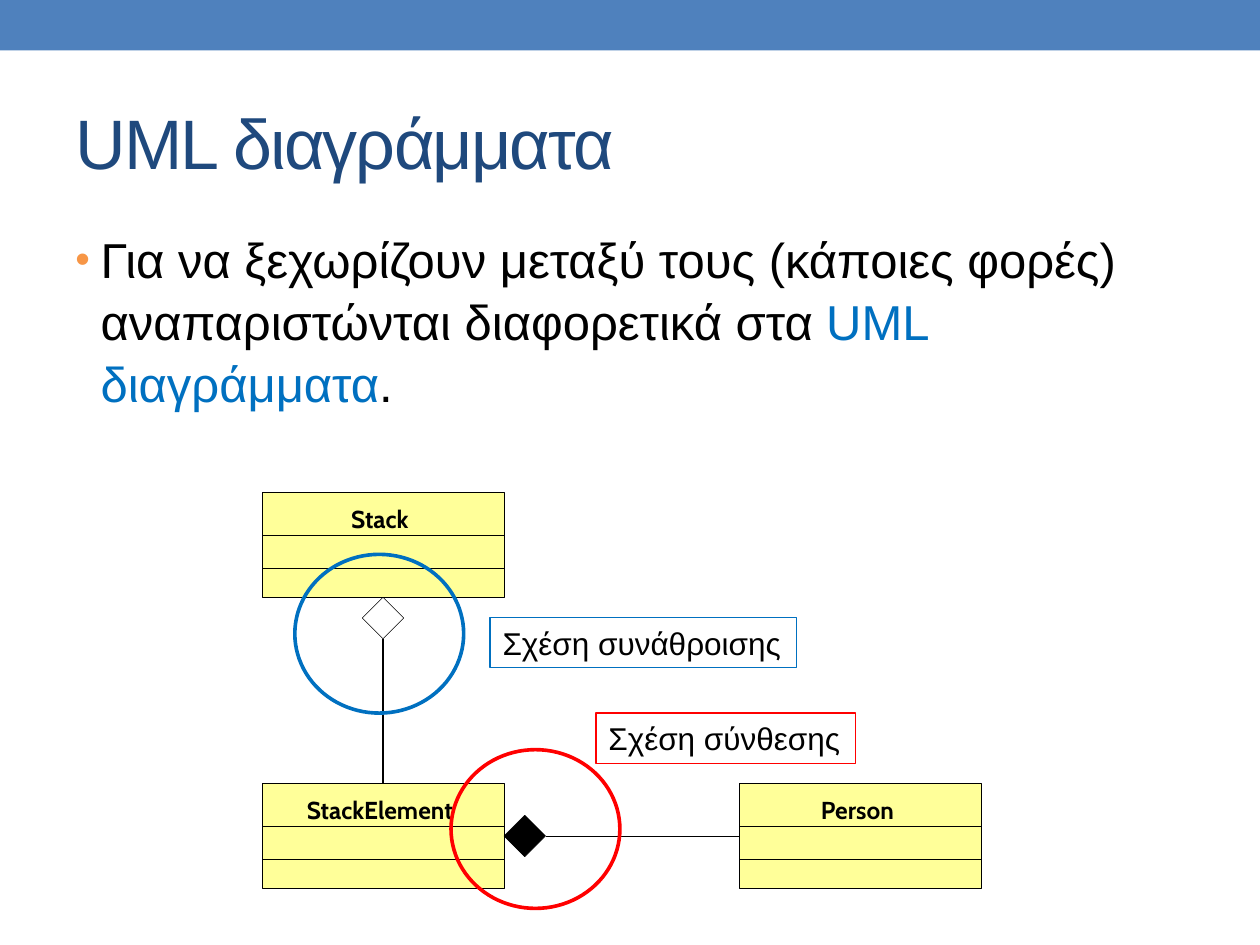
from lxml.etree import SubElement
from pptx import Presentation
from pptx.dml.color import RGBColor
from pptx.enum.shapes import MSO_CONNECTOR as Connector, MSO_SHAPE as Shape
from pptx.enum.text import MSO_ANCHOR as Anchor, MSO_AUTO_SIZE as AutoSize, PP_ALIGN as Align
from pptx.oxml.ns import qn
from pptx.util import Inches, Pt

SLIDE_W, SLIDE_H = 10, 7.5
MARGIN = 0.05 * SLIDE_W
CLASS_W, CLASS_H = 1.92, 0.83
LEFT_COL, RIGHT_COL = 2.08, 5.87
TOP_ROW, BOTTOM_ROW = 3.91, 6.22
DIAMOND = 0.33
RING_W, RING_H = 1.34, 1.26
BLACK, BLUE, RED, YELLOW = "000000", "0070C0", "FF0000", "FFFF99"


def color(hex_string):
    return RGBColor.from_string(hex_string)


def add_run(paragraph, text, size, hex_string, font="Arial", bold=False):
    run = paragraph.add_run()
    run.text = text
    run.font.size = Pt(size)
    run.font.name = font
    run.font.bold = bold
    run.font.color.rgb = color(hex_string)
    return run


def add_figure(shapes, kind, box, fill=None, line=None, width=0.25):
    figure = shapes.add_shape(kind, *map(Inches, box))
    figure.shadow.inherit = False
    if fill:
        figure.fill.solid()
        figure.fill.fore_color.rgb = color(fill)
    else:
        figure.fill.background()
    if line:
        figure.line.color.rgb = color(line)
        figure.line.width = Pt(width)
    else:
        figure.line.fill.background()
    return figure


def add_line(shapes, start, end, width=0.25):
    line = shapes.add_connector(Connector.STRAIGHT, *map(Inches, (*start, *end)))
    line.line.color.rgb = color(BLACK)
    line.line.width = Pt(width)
    SubElement(line._element.spPr, qn("a:effectLst"))


def add_class(slide, name, left, top):
    shapes = slide.shapes.add_group_shape().shapes
    add_figure(shapes, Shape.RECTANGLE, (left, top, CLASS_W, CLASS_H), YELLOW, BLACK)
    heading = shapes.add_textbox(*map(Inches, (left + 0.07, top + 0.04, 1.73, 0.34)))
    frame = heading.text_frame
    frame.word_wrap = True
    frame.auto_size = AutoSize.SHAPE_TO_FIT_TEXT
    frame.paragraphs[0].alignment = Align.CENTER
    add_run(frame.paragraphs[0], name, 14, BLACK, "Cabin", True)
    for offset in (0.34, 0.6):
        add_line(shapes, (left, top + offset), (left + CLASS_W, top + offset))


def add_label(slide, text, box, line):
    label = add_figure(slide.shapes, Shape.RECTANGLE, box, line=line, width=0.75)
    frame = label.text_frame
    frame.word_wrap = False
    frame.auto_size = AutoSize.SHAPE_TO_FIT_TEXT
    frame.vertical_anchor = Anchor.TOP
    frame.paragraphs[0].alignment = Align.LEFT
    add_run(frame.paragraphs[0], text, 18, BLACK)


def add_ring(slide, left, top, line):
    add_figure(slide.shapes, Shape.OVAL, (left, top, RING_W, RING_H), line=line, width=2.08)


def set_title(slide, text):
    title = slide.shapes.title
    title.left, title.top, title.width, title.height = map(
        Inches, (MARGIN, 0.58, SLIDE_W - 2 * MARGIN, 1.08))
    frame = title.text_frame
    frame.vertical_anchor = Anchor.MIDDLE
    frame.paragraphs[0].alignment = Align.LEFT
    run = add_run(frame.paragraphs[0], text, 40, "1F497D")
    run.font._element.set("spc", "-100")


def add_bullet(slide, parts):
    body = slide.shapes.add_textbox(
        *map(Inches, (MARGIN, 1.75, SLIDE_W - 2 * MARGIN, 2.01)))
    body.text_frame.word_wrap = True
    paragraph = body.text_frame.paragraphs[0]
    paragraph.line_spacing = 1.05
    props = paragraph._p.get_or_add_pPr()
    props.set("marL", str(Inches(0.2)))
    props.set("indent", str(-Inches(0.2)))
    SubElement(SubElement(props, qn("a:buClr")), qn("a:srgbClr"), val="F79646")
    SubElement(props, qn("a:buSzPct"), val="85000")
    SubElement(props, qn("a:buFont"), typeface="Arial")
    SubElement(props, qn("a:buChar"), char="•")
    for text, hex_string in parts:
        add_run(paragraph, text, 28, hex_string)


def add_composition(slide):
    left, middle = LEFT_COL + CLASS_W, BOTTOM_ROW + CLASS_H / 2
    add_line(slide.shapes, (left + DIAMOND, middle), (RIGHT_COL, middle))
    add_figure(slide.shapes, Shape.DIAMOND,
               (left, middle - DIAMOND / 2, DIAMOND, DIAMOND), BLACK, BLACK)


def add_aggregation(slide):
    center, top = LEFT_COL + CLASS_W / 2, TOP_ROW + CLASS_H
    add_figure(slide.shapes, Shape.DIAMOND,
               (center - DIAMOND / 2, top, DIAMOND, DIAMOND), line=BLACK)
    add_line(slide.shapes, (center, top + DIAMOND), (center, BOTTOM_ROW), 0.75)


def main():
    deck = Presentation()
    deck.slide_width, deck.slide_height = Inches(SLIDE_W), Inches(SLIDE_H)
    slide = deck.slides.add_slide(deck.slide_layouts[5])
    add_figure(slide.shapes, Shape.RECTANGLE, (0, 0, SLIDE_W, 0.4), "4F81BD")
    set_title(slide, "UML διαγράμματα")
    add_class(slide, "StackElement", LEFT_COL, BOTTOM_ROW)
    add_class(slide, "Person", RIGHT_COL, BOTTOM_ROW)
    add_composition(slide)
    add_class(slide, "Stack", LEFT_COL, TOP_ROW)
    add_aggregation(slide)
    add_bullet(slide, [
        ("Για να ξεχωρίζουν μεταξύ τους (κάποιες φορές) "
         "αναπαριστώνται διαφορετικά στα ", BLACK),
        ("UML διαγράμματα", BLUE),
        (".", BLACK),
    ])
    add_ring(slide, 3.58, 5.95, RED)
    add_label(slide, "Σχέση σύνθεσης", (4.73, 5.66, 2.06, 0.4), RED)
    add_ring(slide, 2.34, 4.4, BLUE)
    add_label(slide, "Σχέση συνάθροισης", (3.89, 4.9, 2.43, 0.4), BLUE)
    deck.save("out.pptx")


if __name__ == "__main__":
    main()
